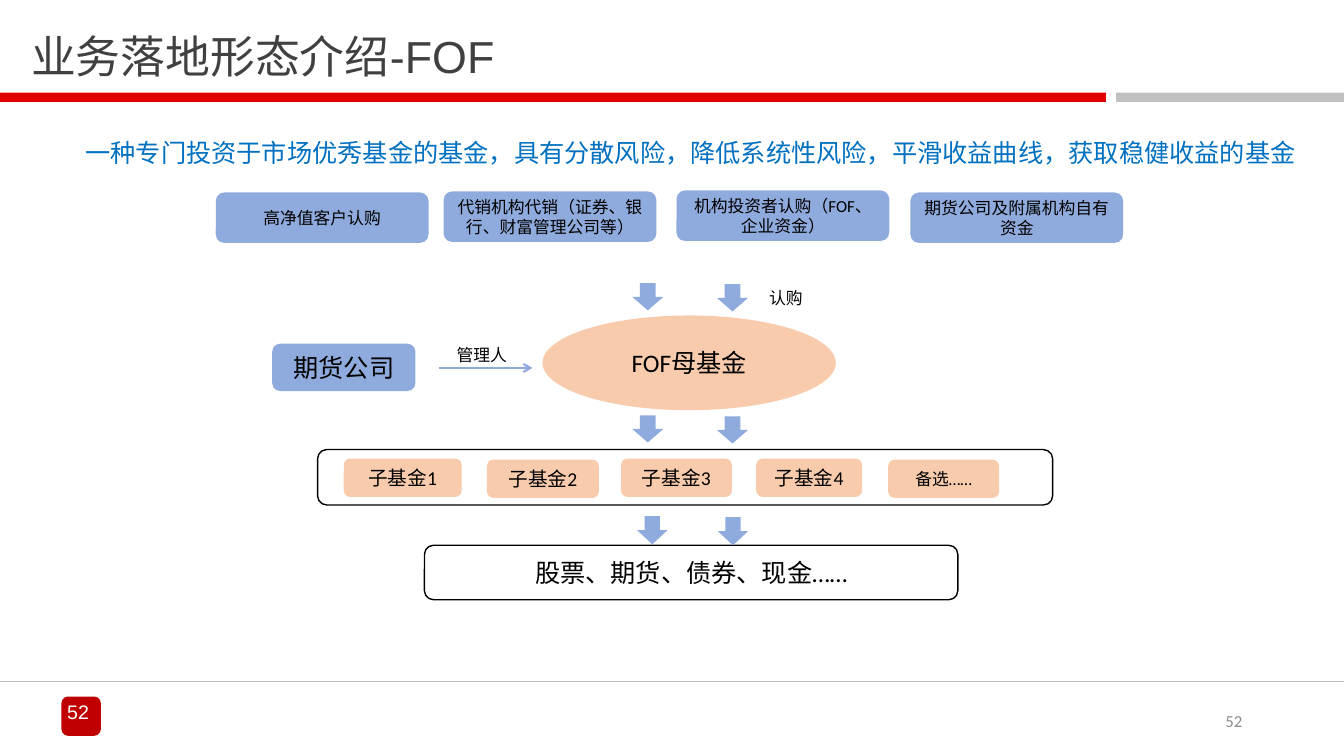
from lxml.etree import SubElement
from pptx import Presentation
from pptx.dml.color import RGBColor
from pptx.enum.shapes import MSO_CONNECTOR, MSO_SHAPE
from pptx.enum.text import MSO_ANCHOR, PP_ALIGN
from pptx.oxml.ns import qn
from pptx.util import Inches, Pt

# Content
TITLE = "业务落地形态介绍-FOF"
TAGLINE = "一种专门投资于市场优秀基金的基金，具有分散风险，降低系统性风险，平滑收益曲线，获取稳健收益的基金"
PAGE_NUMBER = "52"
MANAGER = "期货公司"
MOTHER_FUND = "FOF母基金"
ASSETS = "股票、期货、债券、现金……"
INVESTORS = [  # left, top, wording
    (2.14, 1.91, "高净值客户认购"),
    (4.4, 1.9, "代销机构代销（证券、银行、财富管理公司等）"),
    (6.71, 1.89, "机构投资者认购（FOF、企业资金）"),
    (9.03, 1.91, "期货公司及附属机构自有资金"),
]
SUB_FUNDS = [  # left, top, width, wording, size
    (3.41, 4.55, 1.17, "子基金1", 14),
    (4.83, 4.56, 1.11, "子基金2", 14),
    (6.16, 4.55, 1.1, "子基金3", 14),
    (7.5, 4.55, 1.05, "子基金4", 14),
    (8.81, 4.56, 1.1, "备选……", 12),
]
ARROW_PAIRS = [  # left of each arrow, top of the first, width, height
    (6.27, 7.11, 2.81, 0.31, 0.27),
    (6.27, 7.11, 4.12, 0.31, 0.27),
    (6.32, 7.12, 5.12, 0.3, 0.28),
]
LABELS = [(4.43, 3.37, "管理人"), (7.53, 2.81, "认购")]

BLUE, PEACH, BLACK, WHITE, GREY = "8FAADC", "F8CBAD", "000000", "FFFFFF", "C0C0C0"

deck = Presentation()
deck.slide_width, deck.slide_height = Inches(13.33), Inches(7.5)
page = deck.slides.add_slide(deck.slide_layouts[6])


def color(value):
    return RGBColor.from_string(value)


def write(shape, text, size, ink=BLACK, font="Calibri", align=PP_ALIGN.CENTER,
          anchor=MSO_ANCHOR.MIDDLE, wrap=True):
    frame = shape.text_frame
    frame.word_wrap = wrap
    frame.vertical_anchor = anchor
    para = frame.paragraphs[0]
    para.alignment = align
    span = para.add_run()
    span.text = text
    span.font.size = Pt(size)
    span.font.name = font
    span.font.color.rgb = color(ink)
    SubElement(span.font._element, qn("a:ea")).set("typeface", font)


def add_box(kind, left, top, width, height, fill=None, outline=None):
    box = page.shapes.add_shape(kind, Inches(left), Inches(top), Inches(width), Inches(height))
    box.shadow.inherit = False
    if fill:
        box.fill.solid()
        box.fill.fore_color.rgb = color(fill)
    else:
        box.fill.background()
    if outline:
        box.line.color.rgb = color(outline)
        box.line.width = Pt(1)
    else:
        box.line.fill.background()
    return box


def add_text(left, top, width, height, text, size, align=PP_ALIGN.LEFT,
             anchor=MSO_ANCHOR.TOP, **style):
    box = page.shapes.add_textbox(Inches(left), Inches(top), Inches(width), Inches(height))
    write(box, text, size, align=align, anchor=anchor, **style)


def add_line(left, right, top, ink, weight):
    line = page.shapes.add_connector(
        MSO_CONNECTOR.STRAIGHT, Inches(left), Inches(top), Inches(right), Inches(top))
    line.line.color.rgb = color(ink)
    line.line.width = Pt(weight)
    SubElement(line._element.spPr, qn("a:effectLst"))
    return line


# Page frame
ROUND = MSO_SHAPE.ROUNDED_RECTANGLE
add_box(ROUND, 0.61, 6.91, 0.39, 0.39, "C00000")
add_box(MSO_SHAPE.RECTANGLE, 0, 0.92, 10.97, 0.09, "E20000")
add_box(MSO_SHAPE.RECTANGLE, 11.07, 0.92, 2.26, 0.09, GREY)
add_line(0, 13.33, 6.76, GREY, 1)
add_text(0.33, 6.89, 0.89, 0.37, PAGE_NUMBER, 14, PP_ALIGN.CENTER, ink=WHITE, font="Arial")
add_text(9.42, 6.95, 3, 0.4, PAGE_NUMBER, 12, PP_ALIGN.RIGHT, MSO_ANCHOR.MIDDLE, ink="8C8C8C")

# Title and tagline
add_text(0.21, 0.24, 5.17, 0.64, TITLE, 32, ink="404040", font="Arial", wrap=False)
add_text(0.75, 1.31, 12.39, 0.4, TAGLINE, 18, ink="0070C0")

# Investors
for left, top, wording in INVESTORS:
    write(add_box(ROUND, left, top, 2.11, 0.5, BLUE), wording, 12)

# Mother fund and its manager
write(add_box(MSO_SHAPE.OVAL, 5.38, 3.13, 2.91, 0.94, PEACH), MOTHER_FUND, 18)
write(add_box(ROUND, 2.7, 3.41, 1.42, 0.47, BLUE), MANAGER, 18)
manager_arrow = add_line(4.35, 5.28, 3.65, BLUE, 1.5)
SubElement(manager_arrow.line._get_or_add_ln(), qn("a:tailEnd")).set("type", "arrow")
for left, top, wording in LABELS:
    add_text(left, top, 0.71, 0.3, wording, 12, wrap=False)

# Sub-funds and assets
add_box(ROUND, 3.15, 4.46, 7.29, 0.55, outline=BLACK)
for left, top, width, wording, size in SUB_FUNDS:
    write(add_box(ROUND, left, top, width, 0.38, PEACH), wording, size)
write(add_box(ROUND, 4.21, 5.41, 5.29, 0.54, outline=BLACK), ASSETS, 18)

# Down arrows, the right one slightly lower
for first, second, top, width, height in ARROW_PAIRS:
    for left, drop in ((first, 0), (second, 0.01)):
        add_box(MSO_SHAPE.DOWN_ARROW, left, top + drop, width, height, BLUE)

deck.save("out.pptx")
